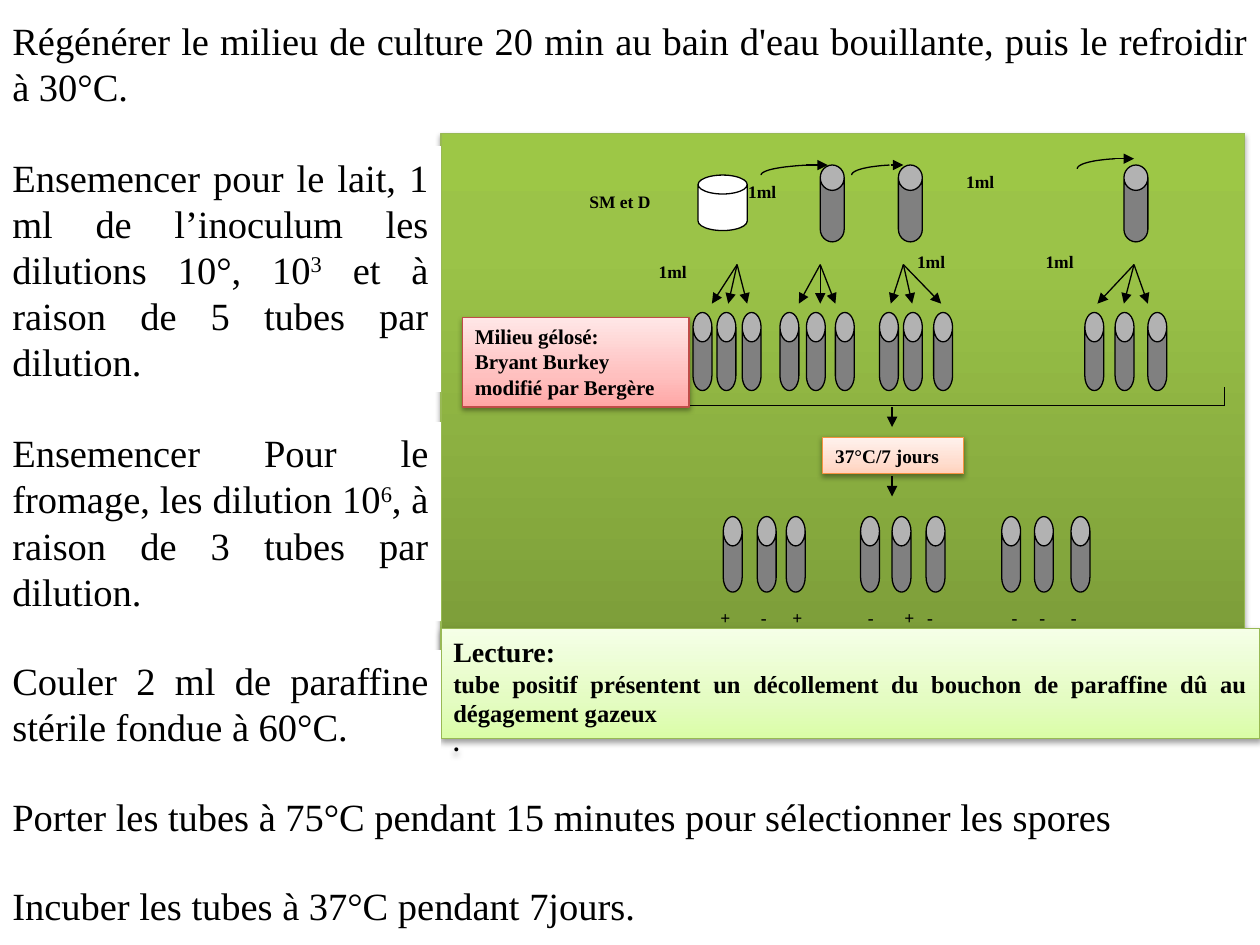
from pptx import Presentation
from pptx.dml.color import RGBColor
from pptx.enum.shapes import MSO_CONNECTOR, MSO_SHAPE
from pptx.enum.text import MSO_ANCHOR, PP_ALIGN
from pptx.oxml import parse_xml
from pptx.oxml.ns import nsdecls, qn
from pptx.util import Inches, Pt
from lxml.etree import SubElement

FONT = "Times New Roman"
COLUMNS, ROWS = 10, 7.5  # grid of one-inch cells
COLORS = {"ink": "000000", "paper": "FFFFFF", "tube": "808080"}
# Each theme: outline colour, gradient stops, shadow opacity, shadow distance
THEMES = {
    "panel": ("98B955", [(0, "779737"), (80, "9BC348"), (100, "9DC746")], 35, 1.8),
    "medium": ("BF4C48", [(0, "FFA6A5"), (35, "FFC0BF"), (100, "FFE7E7")], 38, 1.6),
    "incubation": ("F69240", [(0, "FFD2BD"), (35, "FFDED0"), (100, "FFF2ED")], 38, 1.6),
    "reading": ("98B955", [(0, "DAFDA7"), (35, "E4FCC2"), (100, "F5FFE7")], 38, 1.6),
}

# Protocol steps: top, width, height, spans (^ marks a superscript)
STEPS = [
    (0.08, 10, 0.84, ["Régénérer le milieu de culture 20 min au bain d'eau bouillante, "
                      "puis le refroidir à 30°C."]),
    (6.95, 10, 0.47, ["Incuber les tubes à 37°C pendant 7jours."]),
    (6.24, 10, 0.47, ["Porter les tubes à 75°C pendant 15 minutes pour sélectionner les spores"]),
    (5.16, 3.5, 0.84, ["Couler 2 ml de paraffine stérile fondue à 60°C."]),
    (1.16, 3.5, 1.95, ["Ensemencer pour le lait, 1 ml de l’inoculum les dilutions 10°, 10", "^3",
                       " et à raison de 5 tubes par dilution."]),
    (3.35, 3.5, 1.58, ["Ensemencer Pour le fromage, les dilution 10", "^6",
                       ", à raison de 3 tubes par dilution."]),
]
# Tube rows: top, width, height, lid adjustment, left edges
TUBE_ROWS = [
    (4.1, 0.15, 0.6, 1.555, [5.74, 6.01, 6.24, 6.83, 7.08, 7.35, 7.95, 8.21, 8.5]),
    (2.48, 0.15, 0.62, 1.555,
     [5.5, 5.69, 5.89, 6.19, 6.4, 6.63, 6.98, 7.17, 7.41, 8.61, 8.85, 9.11]),
    (1.31, 0.19, 0.61, 1.058, [6.51, 7.13, 8.92]),
]
# Inoculation fans: origin and the three tips
FANS = [(5.85, [5.65, 5.78, 5.93]), (6.51, [6.34, 6.51, 6.63]),
        (7.17, [7.07, 7.24, 7.47]), (9, [8.71, 8.92, 9.11])]
# Transfers: arc start, arc end, arrow start, arrow tip, top
TRANSFERS = [(6.04, 6.42, 6.4, 6.57, 1.31), (6.76, 7.06, 7.07, 7.17, 1.31),
             (8.55, 8.85, 8.85, 9, 1.26)]
LABELS = [("SM et D", 4.58, 1.47, 0.71), ("1ml", 7.57, 1.31, 0.47), ("1ml", 5.84, 1.39, 0.47),
          ("1ml", 8.2, 1.94, 0.47), ("1ml", 7.18, 1.94, 0.47), ("1ml", 5.13, 2.02, 0.47)]
RESULTS = ["+", "-", "+", "-", "+", "-", "-", "-", "-"]
RESULT_TABS = [0.32, 0.57, 1.17, 1.46, 1.64, 2.31, 2.53, 2.78]
BRACKET = (5.09, 9.72, 3.07, 3.22)  # left, right, top, bottom

deck = Presentation()
deck.slide_width, deck.slide_height = Inches(COLUMNS), Inches(ROWS)
page = deck.slides.add_slide(deck.slide_layouts[6])


def color(name):
    return RGBColor.from_string(COLORS.get(name, name))


def outline(shape, name="ink"):
    shape.line.color.rgb = color(name)
    shape.line.width = Pt(0.75)


def add_preset(kind, left, top, width, height, fill):
    shape = page.shapes.add_shape(kind, *map(Inches, (left, top, width, height)))
    shape.shadow.inherit = False
    shape.fill.solid()
    shape.fill.fore_color.rgb = color(fill)
    outline(shape)
    return shape


def add_can(left, top, width, height, lid, fill="tube"):
    add_preset(MSO_SHAPE.CAN, left, top, width, height, fill).adjustments[0] = lid


def add_card(theme, left, top, width, height):
    border, stops, opacity, distance = THEMES[theme]
    card = add_preset(MSO_SHAPE.RECTANGLE, left, top, width, height, "paper")
    outline(card, border)
    card.fill.gradient()
    card.fill.gradient_angle = 90
    properties = card._element.spPr
    stop_list = properties.find(qn("a:gradFill")).find(qn("a:gsLst"))
    for old in list(stop_list):
        stop_list.remove(old)
    for position, value in stops:
        stop = SubElement(stop_list, qn("a:gs"), pos=str(position * 1000))
        SubElement(stop, qn("a:srgbClr"), val=value)
    properties.find(qn("a:effectLst")).append(parse_xml(
        f'<a:outerShdw {nsdecls("a")} blurRad="{Pt(3.1)}" dist="{Pt(distance)}" dir="5400000" '
        f'rotWithShape="0"><a:srgbClr val="000000"><a:alpha val="{opacity * 1000}"/>'
        '</a:srgbClr></a:outerShdw>'))
    return card


def add_line(x1, y1, x2, y2, arrow=False):
    line = page.shapes.add_connector(MSO_CONNECTOR.STRAIGHT, *map(Inches, (x1, y1, x2, y2)))
    outline(line)
    if arrow:
        SubElement(line.line._get_or_add_ln(), qn("a:tailEnd"), type="triangle")
    SubElement(line._element.spPr, qn("a:effectLst"))


def add_arc(left, right, top, height=0.08, steps=16):
    points = []
    for step in range(steps + 1):
        t = step / steps
        weights = ((1 - t) ** 3, 3 * t * (1 - t) ** 2, 3 * t * t * (1 - t), t ** 3)
        xs = (right, left + 0.42 * (right - left), left, left)
        ys = (top, top + 0.01, top + height / 2, top + height)
        points.append(tuple(Inches(sum(w * v for w, v in zip(weights, values)))
                            for values in (xs, ys)))
    builder = page.shapes.build_freeform(*points[0], scale=1.0)
    builder.add_line_segments(points[1:], close=False)
    arc = builder.convert_to_shape()
    arc.shadow.inherit = False
    arc.fill.background()
    outline(arc)


def write(shape, paragraphs, size, bold=True, align=PP_ALIGN.LEFT, anchor=MSO_ANCHOR.TOP):
    """Fill a shape; each paragraph is a list of spans, size is one value per paragraph."""
    frame = shape.text_frame
    frame.word_wrap = True
    frame.vertical_anchor = anchor
    for index, (spans, points) in enumerate(zip(paragraphs, size)):
        para = frame.paragraphs[0] if index == 0 else frame.add_paragraph()
        para.alignment = align
        for text in spans:
            span = para.add_run()
            span.text = text.lstrip("^")
            span.font.name, span.font.size, span.font.bold = FONT, Pt(points), bold
            span.font.color.rgb = color("ink")
            if text.startswith("^"):
                span.font._element.set("baseline", "30000")


def add_label(text, left, top, width, tabs=()):
    box = page.shapes.add_textbox(*map(Inches, (left, top, width, 0.27)))
    if tabs:
        tab_list = SubElement(box.text_frame.paragraphs[0]._p.get_or_add_pPr(), qn("a:tabLst"))
        for position in tabs:
            SubElement(tab_list, qn("a:tab"), pos=str(Inches(position)), algn="l")
    write(box, [[text]], [10])


# Diagram: panel, tubes and inoculation arrows
add_card("panel", 3.5, 1.06, 6.38, 4.54)
for top, width, height, lid, lefts in TUBE_ROWS:
    for left in lefts:
        add_can(left, top, width, height, lid)
add_can(5.54, 1.39, 0.39, 0.44, 0.385, "paper")
for origin, tips in FANS:
    for tip in tips:
        add_line(origin, 2.1, tip, 2.41, arrow=True)
for arc_left, arc_right, start, tip, top in TRANSFERS:
    add_arc(arc_left, arc_right, top)
    add_line(start, top, tip, top, arrow=True)

# Bracket leading to incubation
left, right, top, bottom = BRACKET
add_line(left, bottom, right, bottom)
for side in (left, right):
    add_line(side, bottom, side, top)
for top in (3.23, 3.78):
    add_line(7.08, top, 7.08, top + 0.16, arrow=True)

# Cards and labels
write(add_card("medium", 3.67, 2.52, 1.8, 0.71),
      [["Milieu gélosé:"], ["Bryant Burkey modifié par Bergère"]], [12, 12])
for label in LABELS:
    add_label(*label)
add_label("\t".join(RESULTS), 5.62, 4.77, 3.07, RESULT_TABS)
write(add_card("incubation", 6.53, 3.47, 1.12, 0.29), [["37°C/7 jours"]], [11],
      anchor=MSO_ANCHOR.MIDDLE)
write(add_card("reading", 3.5, 4.99, 6.5, 0.87),
      [["Lecture:"], ["tube positif présentent un décollement du bouchon de paraffine "
                      "dû au dégagement gazeux"], ["."]],
      [16, 14, 14], align=PP_ALIGN.JUSTIFY)

# Protocol steps
for top, width, height, spans in STEPS:
    step_box = add_preset(MSO_SHAPE.RECTANGLE, 0, top, width, height, "paper")
    step_box.line.fill.background()
    write(step_box, [spans], [22], bold=False, align=PP_ALIGN.JUSTIFY, anchor=MSO_ANCHOR.MIDDLE)

deck.save("out.pptx")
